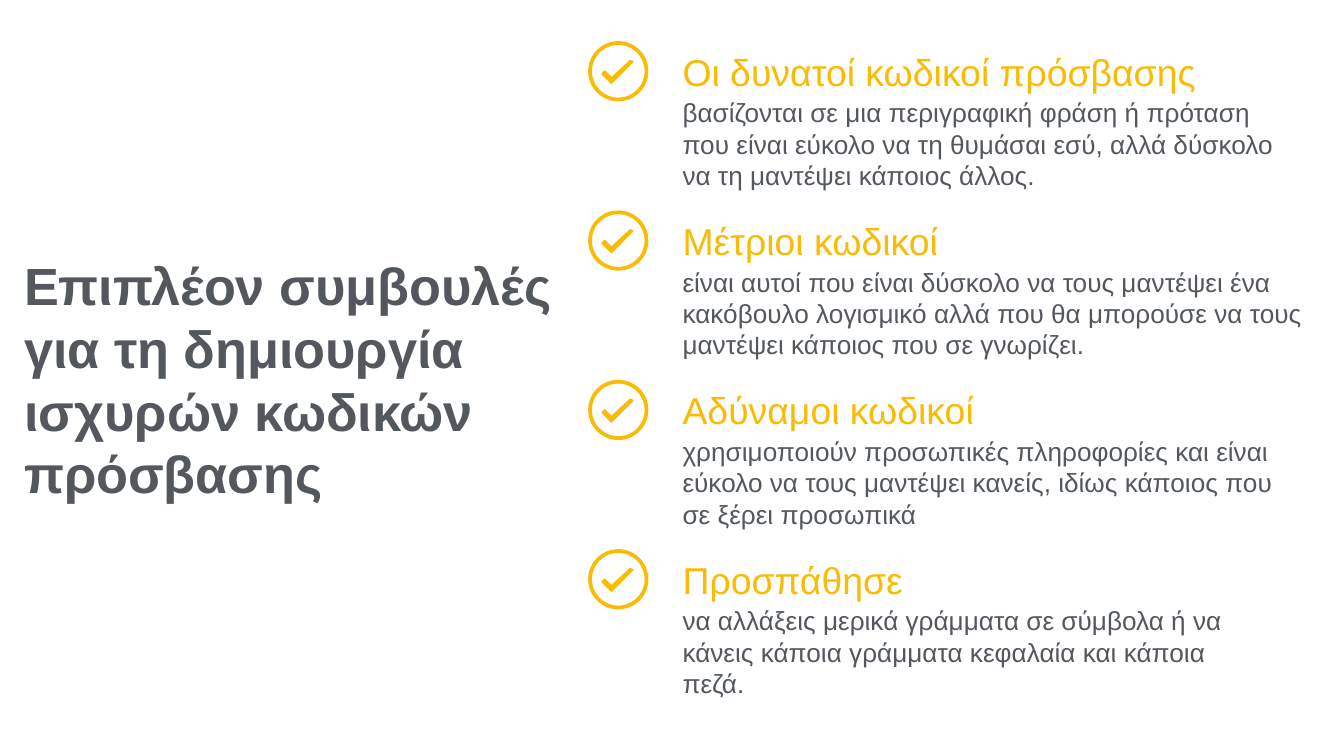
from pptx import Presentation
from pptx.dml.color import RGBColor
from pptx.enum.shapes import MSO_SHAPE
from pptx.enum.text import MSO_ANCHOR, MSO_AUTO_SIZE, PP_ALIGN
from pptx.util import Inches, Pt

YELLOW = RGBColor(0xFA, 0xBB, 0x05)
GREY = RGBColor(0x53, 0x58, 0x5F)
FONT = "Arial"

TITLE = "Επιπλέον συμβουλές για τη δημιουργία ισχυρών κωδικών πρόσβασης"
# heading, heading width, advice, advice width, advice height
TIPS = [
    ("Οι δυνατοί κωδικοί πρόσβασης", 4.59,
     "βασίζονται σε μια περιγραφική φράση ή πρόταση που είναι εύκολο να τη "
     "θυμάσαι εσύ, αλλά δύσκολο να τη μαντέψει κάποιος άλλος.", 4.78, 0.91),
    ("Μέτριοι κωδικοί", 4.62,
     "είναι αυτοί που είναι δύσκολο να τους μαντέψει ένα κακόβουλο λογισμικό "
     "αλλά που θα μπορούσε να τους μαντέψει κάποιος που σε γνωρίζει.", 5.02, 0.91),
    ("Αδύναμοι κωδικοί", 2.99,
     "χρησιμοποιούν προσωπικές πληροφορίες και είναι εύκολο να τους μαντέψει "
     "κανείς, ιδίως κάποιος που σε ξέρει προσωπικά", 4.59, 0.91),
    ("Προσπάθησε", 2.99,
     "να αλλάξεις μερικά γράμματα σε σύμβολα ή να κάνεις κάποια γράμματα "
     "κεφαλαία και κάποια πεζά.", 4.59, 0.67),
]

FIRST_TOP, ROW_STEP = 0.26, 1.26
ICON_LEFT, TEXT_LEFT, ICON_SIZE = 4.39, 4.98, 0.42
# Corners of the tick, measured from the top left of its circle
TICK = [(0.16, 0.26), (0.11, 0.21), (0.09, 0.23), (0.16, 0.3), (0.32, 0.14), (0.3, 0.13)]


def write(shape, text, size, color, anchor, bold=False):
    frame = shape.text_frame
    frame.word_wrap = True
    frame.auto_size = MSO_AUTO_SIZE.NONE
    frame.vertical_anchor = anchor
    frame.margin_left = frame.margin_right = Inches(0.1)
    frame.margin_top = frame.margin_bottom = Inches(0.1)
    para = frame.paragraphs[0]
    para.alignment = PP_ALIGN.LEFT
    span = para.add_run()
    span.text = text
    span.font.name = FONT
    span.font.size = Pt(size)
    span.font.bold = bold
    span.font.color.rgb = color


def add_check(shapes, top):
    circle = shapes.add_shape(MSO_SHAPE.OVAL, Inches(ICON_LEFT), Inches(top),
                              Inches(ICON_SIZE), Inches(ICON_SIZE))
    circle.fill.background()
    corners = [(Inches(ICON_LEFT + x), Inches(top + y)) for x, y in TICK]
    builder = shapes.build_freeform(*corners[0])
    builder.add_line_segments(corners[1:], close=True)
    tick = builder.convert_to_shape()
    tick.fill.solid()
    tick.fill.fore_color.rgb = YELLOW
    for shape, width in ((circle, 2), (tick, 0.75)):
        shape.shadow.inherit = False
        shape.line.color.rgb = YELLOW
        shape.line.width = Pt(width)


def add_tip(slide, top, heading, heading_width, advice, advice_width, advice_height):
    shapes = slide.shapes.add_group_shape().shapes
    add_check(shapes, top + 0.06)
    box = shapes.add_textbox(Inches(TEXT_LEFT), Inches(top), Inches(heading_width), Inches(0.54))
    write(box, heading, 20, YELLOW, MSO_ANCHOR.MIDDLE)
    box = shapes.add_textbox(Inches(TEXT_LEFT), Inches(top + 0.36),
                             Inches(advice_width), Inches(advice_height))
    write(box, advice, 14, GREY, MSO_ANCHOR.TOP)


deck = Presentation()
deck.slide_width = Inches(10)
deck.slide_height = Inches(10 * 9 / 16)
page = deck.slides.add_slide(deck.slide_layouts[5])

title = page.shapes.title
title.left, title.top, title.width, title.height = map(Inches, (0.08, 2.01, 4.3, 1.62))
write(title, TITLE, 28, GREY, MSO_ANCHOR.MIDDLE, bold=True)

for row, tip in enumerate(TIPS):
    add_tip(page, FIRST_TOP + row * ROW_STEP, *tip)

deck.save("out.pptx")
